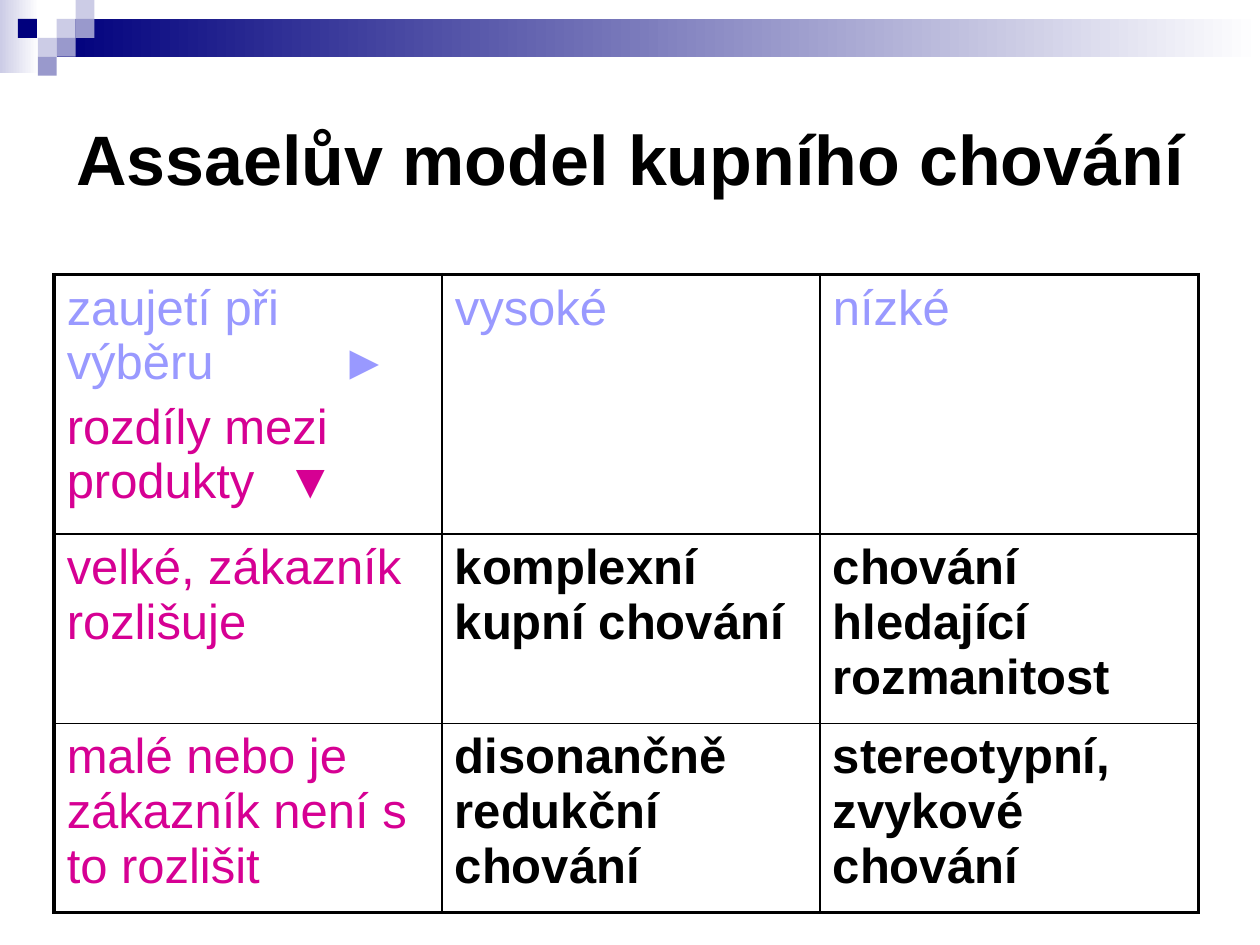
import pptx
import pptx.dml.color
import pptx.enum.shapes
import pptx.enum.text
import pptx.oxml
import pptx.oxml.ns
import pptx.util
from lxml import etree

W, H = 10, 7.5
UNIT = 0.15
NAVY, LILAC, BLUE, WHITE, BLACK = "00007D", "CCCCE6", "9999CC", "FFFFFF", "000000"
PERIWINKLE, MAGENTA = "9999FF", "D60093"
SQUARES = [(3, 1, LILAC), (4, 0, LILAC), (4, 1, BLUE), (2, 2, LILAC),
           (0.95, 1, NAVY), (3, 2, BLUE), (2, 3, BLUE)]
COLS = [3.08, 3, 3]
ROWS = [2.06, 1.5, 1.5]
CELLS = [
    [[("zaujetí při výběru\t►", PERIWINKLE, 2.17), ("rozdíly mezi produkty\t▼", MAGENTA, 1.74)],
     [("vysoké", PERIWINKLE, None)],
     [("nízké", PERIWINKLE, None)]],
    [[("velké, zákazník rozlišuje", MAGENTA, None)],
     [("komplexní kupní chování", BLACK, None)],
     [("chování hledající rozmanitost", BLACK, None)]],
    [[("malé nebo je zákazník není s to rozlišit", MAGENTA, None)],
     [("disonančně redukční chování", BLACK, None)],
     [("stereotypní, zvykové chování", BLACK, None)]],
]


def inch(value):
    return pptx.util.Inches(value)


def rgb(value):
    return pptx.dml.color.RGBColor.from_string(value)


def add_rect(s, x, y, w, h, color, fade_to=None):
    sp = s.shapes.add_shape(pptx.enum.shapes.MSO_SHAPE.RECTANGLE,
                            inch(x), inch(y), inch(w), inch(h))
    sp.shadow.inherit = False
    sp.line.fill.background()
    if fade_to is None:
        sp.fill.solid()
        sp.fill.fore_color.rgb = rgb(color)
    else:
        sp.fill.gradient()
        sp.fill.gradient_angle = 0
        for stop, shade in zip(sp.fill.gradient_stops, (color, fade_to)):
            stop.color.rgb = rgb(shade)


def add_run(p, text, size, color, bold):
    r = p.add_run()
    r.text = text
    r.font.name = "Arial"
    r.font.size = pptx.util.Pt(size)
    r.font.bold = bold
    r.font.color.rgb = rgb(color)


def add_title(s, text):
    sp = s.shapes.add_textbox(inch(0.05 * W), inch(H / 15), inch(0.9 * W), inch(H / 5))
    tf = sp.text_frame
    tf.word_wrap = True
    tf.margin_left = tf.margin_right = inch(0.05)
    tf.vertical_anchor = pptx.enum.text.MSO_ANCHOR.MIDDLE
    p = tf.paragraphs[0]
    p.alignment = pptx.enum.text.PP_ALIGN.CENTER
    add_run(p, text, 40, BLACK, True)


def add_tab_stop(p, position):
    tabs = etree.SubElement(p._p.get_or_add_pPr(), pptx.oxml.ns.qn("a:tabLst"))
    etree.SubElement(tabs, pptx.oxml.ns.qn("a:tab"), pos=str(inch(position)), algn="l")


def set_borders(cell, widths):
    tcPr = cell._tc.get_or_add_tcPr()
    for i, (side, width) in enumerate(widths.items()):
        ln = pptx.oxml.parse_xml(
            f'<a:ln{side} {pptx.oxml.ns.nsdecls("a")} w="{pptx.util.Pt(width)}">'
            f'<a:solidFill><a:srgbClr val="{BLACK}"/></a:solidFill></a:ln{side}>')
        tcPr.insert(i, ln)


def fill_cell(cell, paragraphs):
    cell.fill.background()
    tf = cell.text_frame
    for i, (text, color, tab) in enumerate(paragraphs):
        p = tf.add_paragraph() if i else tf.paragraphs[0]
        p.space_before = pptx.util.Pt(5.6)
        if tab is not None:
            add_tab_stop(p, tab)
        add_run(p, text, 28, color, color == BLACK)


def add_model_table(s):
    frame = s.shapes.add_table(len(ROWS), len(COLS), inch(0.43), inch(2.18),
                               inch(sum(COLS)), inch(sum(ROWS)))
    table = frame.table
    table.first_row = table.horz_banding = False
    for column, width in zip(table.columns, COLS):
        column.width = inch(width)
    for row, height in zip(table.rows, ROWS):
        row.height = inch(height)
    last_row, last_col = len(ROWS) - 1, len(COLS) - 1
    for i, row in enumerate(CELLS):
        for j, paragraphs in enumerate(row):
            cell = table.cell(i, j)
            fill_cell(cell, paragraphs)
            outer = {"L": j == 0, "R": j == last_col, "T": i == 0, "B": i == last_row}
            set_borders(cell, {side: 2.25 if edge else 1 for side, edge in outer.items()})


def add_header(s):
    add_rect(s, 0, 0, 0.31, 0.58, LILAC, WHITE)
    add_rect(s, 3 * UNIT, UNIT, W - 3 * UNIT, 2 * UNIT, NAVY, WHITE)
    for col, row, color in SQUARES:
        add_rect(s, col * UNIT, row * UNIT, UNIT, UNIT, color)


def main():
    prs = pptx.Presentation()
    prs.slide_width, prs.slide_height = inch(W), inch(H)
    s = prs.slides.add_slide(prs.slide_layouts[6])
    add_header(s)
    add_title(s, "Assaelův model kupního chování")
    add_model_table(s)
    prs.save("out.pptx")


if __name__ == "__main__":
    main()
